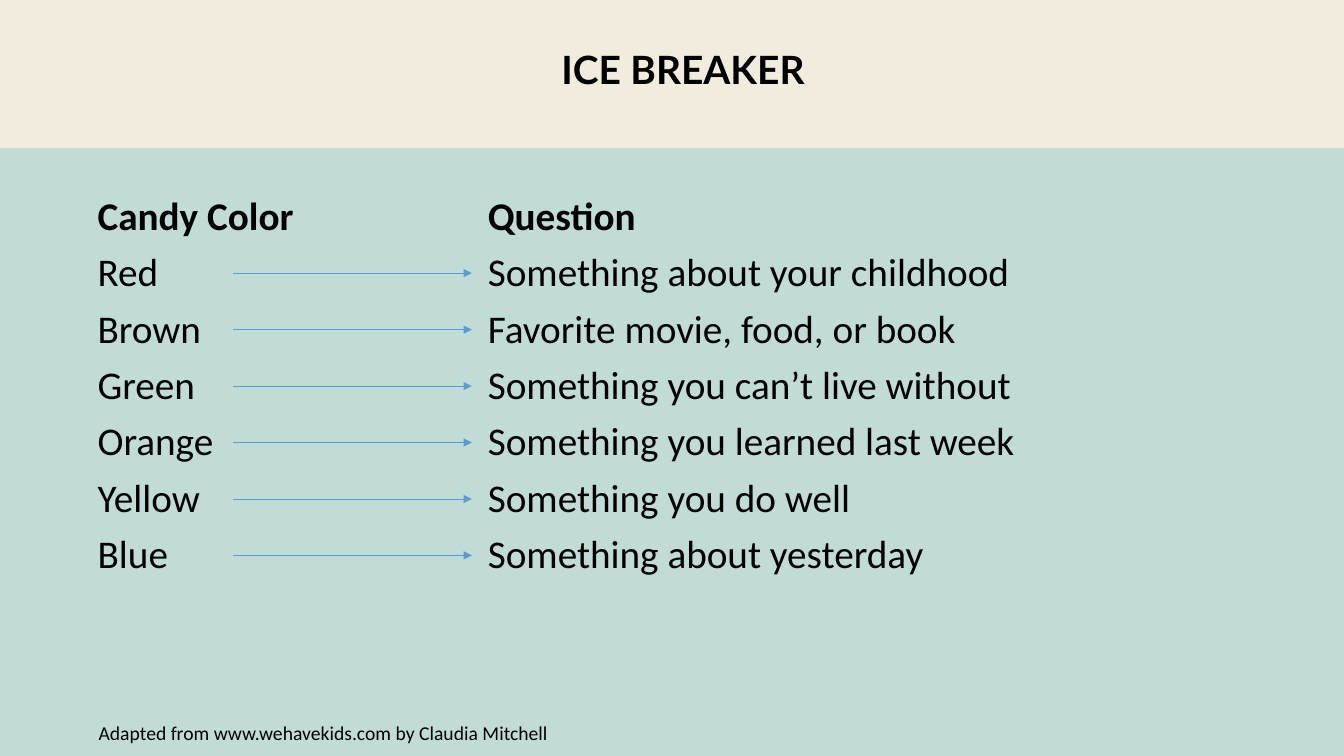
from lxml import etree
from pptx import Presentation
from pptx.dml.color import RGBColor
from pptx.enum.shapes import MSO_CONNECTOR as Connector, MSO_SHAPE as Shape
from pptx.enum.text import MSO_ANCHOR as Anchor, PP_ALIGN as Align
from pptx.oxml.ns import qn
from pptx.util import Inches, Pt


def rgb(value):
    return RGBColor.from_string(value)


class IceBreakerSlide:
    MINT, CREAM, BLACK, BLUE = "C1DBD7", "F2ECDF", "000000", "5B9BD5"
    BODY_FONT, TITLE_FONT = "Calibri", "Lato"

    def __init__(self, deck):
        self.slide = deck.slides.add_slide(deck.slide_layouts[6])
        fill = self.slide.background.fill
        fill.solid()
        fill.fore_color.rgb = rgb(self.MINT)

    def band(self, *box):
        band = self.slide.shapes.add_shape(Shape.RECTANGLE, *map(Inches, box))
        band.shadow.inherit = False
        band.fill.solid()
        band.fill.fore_color.rgb = rgb(self.CREAM)
        band.line.fill.background()

    def text(self, box, lines, size, font=BODY_FONT, bold_first=False,
             anchor=Anchor.TOP, **paragraph_format):
        frame = self.slide.shapes.add_textbox(*map(Inches, box)).text_frame
        frame.word_wrap = True
        frame.vertical_anchor = anchor
        for index, line in enumerate(lines):
            paragraph = frame.paragraphs[0] if index == 0 else frame.add_paragraph()
            for name, value in paragraph_format.items():
                if index or name != "space_before":
                    setattr(paragraph, name, value)
            run = paragraph.add_run()
            run.text = line
            style = {"name": font, "size": Pt(size), "bold": bold_first and index == 0}
            for name, value in style.items():
                setattr(run.font, name, value)
            run.font.color.rgb = rgb(self.BLACK)
        return frame

    def title(self, box, words):
        frame = self.text(box, [words], 48, self.TITLE_FONT, True, Anchor.MIDDLE,
                          alignment=Align.CENTER, line_spacing=0.9)
        # Raised text, which also draws smaller
        frame.paragraphs[0].runs[0].font._element.set("baseline", "30000")

    def column(self, box, lines):
        self.text(box, lines, 28, bold_first=True, line_spacing=0.9, space_before=Pt(10))

    def arrow(self, left, right, y):
        arrow = self.slide.shapes.add_connector(
            Connector.STRAIGHT, Inches(left), Inches(y), Inches(right), Inches(y))
        arrow.line.color.rgb = rgb(self.BLUE)
        arrow.line.width = Pt(0.5)
        etree.SubElement(arrow.line._get_or_add_ln(), qn("a:tailEnd"), type="triangle")
        etree.SubElement(arrow._element.spPr, qn("a:effectLst"))


def main():
    deck = Presentation()
    deck.slide_width, deck.slide_height = Inches(13.33), Inches(7.5)
    page = IceBreakerSlide(deck)

    # Heading
    page.band(0, 0, 13.33, 1.47)
    page.title((3.5, 0.36, 6.55, 0.92), "ICE BREAKER")

    # Candy colors and their questions
    pairs = [
        ("Candy Color", "Question"),
        ("Red", "Something about your childhood"),
        ("Brown", "Favorite movie, food, or book"),
        ("Green", "Something you can’t live without"),
        ("Orange", "Something you learned last week"),
        ("Yellow", "Something you do well"),
        ("Blue", "Something about yesterday"),
    ]
    candies, questions = zip(*pairs)
    page.column((0.87, 1.9, 3.22, 5.76), candies)
    page.column((4.74, 1.9, 5.95, 5.76), questions)

    # One arrow per candy
    first_row, row_pitch = 2.71, 0.56
    for row in range(len(pairs) - 1):
        page.arrow(2.31, 4.68, first_row + row * row_pitch)

    # Credit
    page.text((0.88, 7.1, 7.07, 0.34),
              ["Adapted from www.wehavekids.com by Claudia Mitchell"], 14)

    deck.save("out.pptx")


if __name__ == "__main__":
    main()
